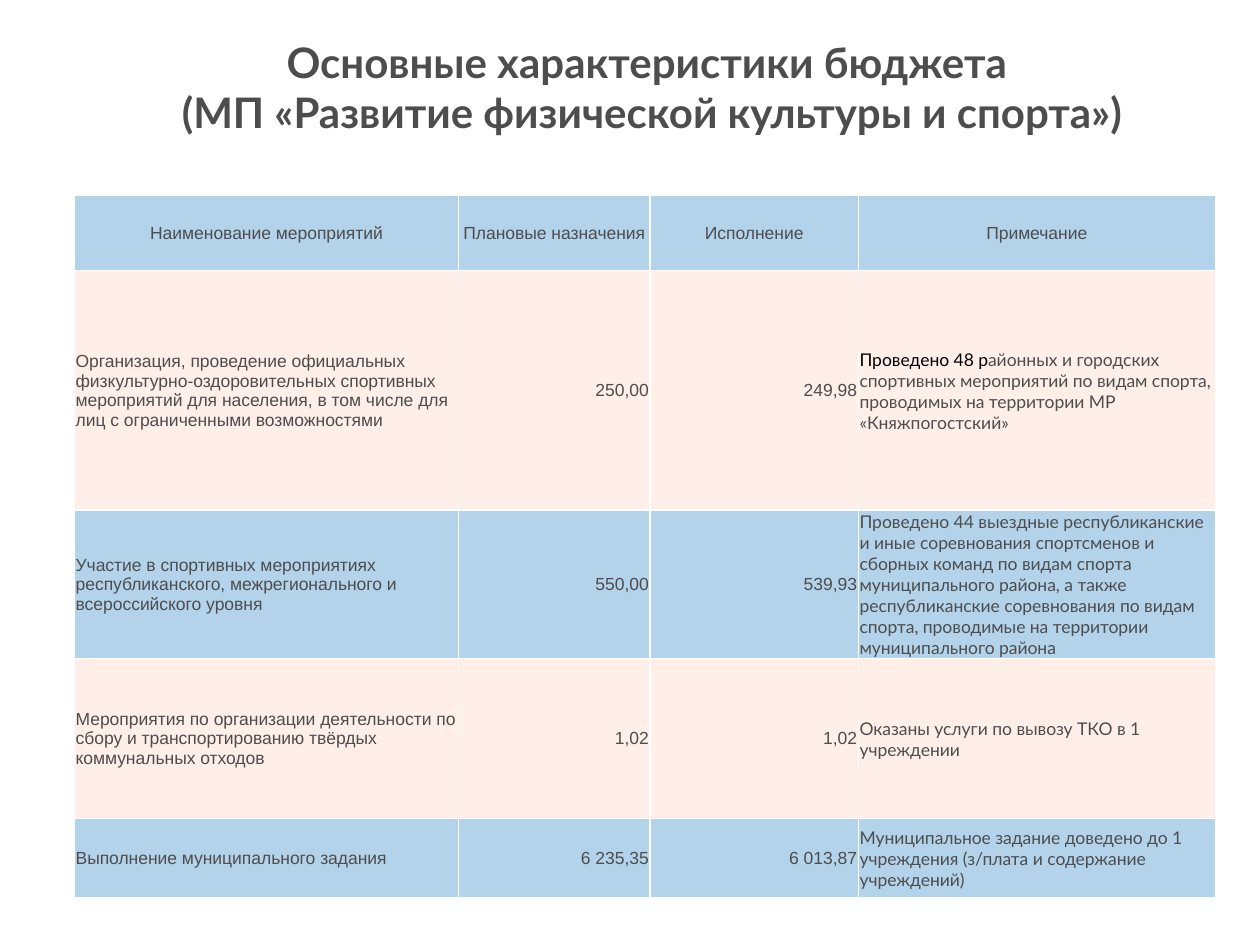
from dataclasses import dataclass

from lxml.etree import SubElement
from pptx import Presentation
from pptx.dml.color import RGBColor
from pptx.enum.text import MSO_ANCHOR, MSO_AUTO_SIZE, PP_ALIGN
from pptx.oxml.ns import qn
from pptx.util import Pt


@dataclass(frozen=True)
class Theme:
    text: str = "4D4D4D"
    accent: str = "000000"
    blue: str = "B3D3EA"
    peach: str = "FFEFE8"
    border: str = "FFFFFF"
    heading_font: str = "Lato"
    body_font: str = "Arial"
    title_size: int = 24
    body_size: int = 10


THEME = Theme()
TITLE = "Основные характеристики бюджета \v(МП «Развитие физической культуры и спорта»)"
HEADER = ["Наименование мероприятий", "Плановые назначения", "Исполнение", "Примечание"]
ACCENTED = "Проведено 48 р"
ROWS = [
    ["Организация, проведение официальных физкультурно-оздоровительных спортивных "
     "мероприятий для населения, в том числе для лиц с ограниченными возможностями",
     "250,00", "249,98",
     "Проведено 48 районных и городских спортивных мероприятий по видам спорта, "
     "проводимых на территории МР «Княжпогостский»"],
    ["Участие в спортивных мероприятиях республиканского, межрегионального и "
     "всероссийского уровня",
     "550,00", "539,93",
     "Проведено 44 выездные республиканские и иные соревнования спортсменов и сборных "
     "команд по видам спорта муниципального района, а также республиканские соревнования "
     "по видам спорта, проводимые на территории муниципального района"],
    ["Мероприятия по организации деятельности по сбору и транспортированию твёрдых "
     "коммунальных отходов",
     "1,02", "1,02",
     "Оказаны услуги по вывозу ТКО в 1 учреждении"],
    ["Выполнение муниципального задания",
     "6 235,35", "6 013,87",
     "Муниципальное задание доведено до 1 учреждения (з/плата и содержание учреждений)"],
]
COLUMN_WIDTHS = [219.5, 109.5, 119, 204]
ROW_HEIGHTS = [43, 137, 84.5, 91.5, 45.5]
COLUMN_ALIGNS = [PP_ALIGN.LEFT, PP_ALIGN.RIGHT, PP_ALIGN.RIGHT, PP_ALIGN.LEFT]


def set_font(font, name, size, bold=False):
    font.name = name
    font.size = Pt(size)
    font.bold = bold
    font.color.rgb = RGBColor.from_string(THEME.text)


def place_title(page, left, top, width, height):
    title = page.shapes.title
    title.left, title.top, title.width, title.height = map(Pt, (left, top, width, height))
    frame = title.text_frame
    frame.word_wrap = True
    frame.auto_size = MSO_AUTO_SIZE.NONE
    frame.vertical_anchor = MSO_ANCHOR.MIDDLE
    frame.text = TITLE
    para = frame.paragraphs[0]
    para.alignment = PP_ALIGN.CENTER
    set_font(para.font, THEME.heading_font, THEME.title_size, bold=True)


def add_borders(cell):
    properties = cell._tc.get_or_add_tcPr()
    for position, side in enumerate(("lnL", "lnR", "lnT", "lnB")):
        line = properties.makeelement(qn(f"a:{side}"), {"w": str(Pt(1))})
        fill = SubElement(line, qn("a:solidFill"))
        SubElement(fill, qn("a:srgbClr"), val=THEME.border)
        properties.insert(position, line)


def write_cell(cell, text, align, font_name, fill):
    cell.margin_left = cell.margin_right = cell.margin_top = Pt(0.75)
    cell.margin_bottom = 0
    cell.vertical_anchor = MSO_ANCHOR.MIDDLE
    cell.fill.solid()
    cell.fill.fore_color.rgb = RGBColor.from_string(fill)
    add_borders(cell)
    para = cell.text_frame.paragraphs[0]
    para.alignment = align
    set_font(para.font, font_name, THEME.body_size)
    if text.startswith(ACCENTED):
        span = para.add_run()
        span.text = ACCENTED
        span.font.color.rgb = RGBColor.from_string(THEME.accent)
        text = text.removeprefix(ACCENTED)
    para.add_run().text = text


def place_budget_table(page, left, top, width, height):
    """Fill the box, sharing it out in proportion to the column and row sizes."""
    lines = [HEADER] + ROWS
    table = page.shapes.add_table(
        len(lines), len(HEADER), Pt(left), Pt(top), Pt(width), Pt(height)).table
    for column, size in zip(table.columns, COLUMN_WIDTHS):
        column.width = Pt(size * width / sum(COLUMN_WIDTHS))
    for row, size in zip(table.rows, ROW_HEIGHTS):
        row.height = Pt(size * height / sum(ROW_HEIGHTS))
    for r, line in enumerate(lines):
        fill = THEME.peach if r % 2 else THEME.blue
        for c, text in enumerate(line):
            is_note = r > 0 and c == len(HEADER) - 1
            write_cell(table.cell(r, c), text,
                       COLUMN_ALIGNS[c] if r else PP_ALIGN.CENTER,
                       THEME.heading_font if is_note else THEME.body_font, fill)


def main():
    deck = Presentation()
    deck.slide_width, deck.slide_height = Pt(720), Pt(540)
    page = deck.slides.add_slide(deck.slide_layouts[5])
    place_title(page, 93.5, 15, 558, 69)
    place_budget_table(page, 42.5, 111.5, 652, 401.5)
    deck.save("out.pptx")


if __name__ == "__main__":
    main()
